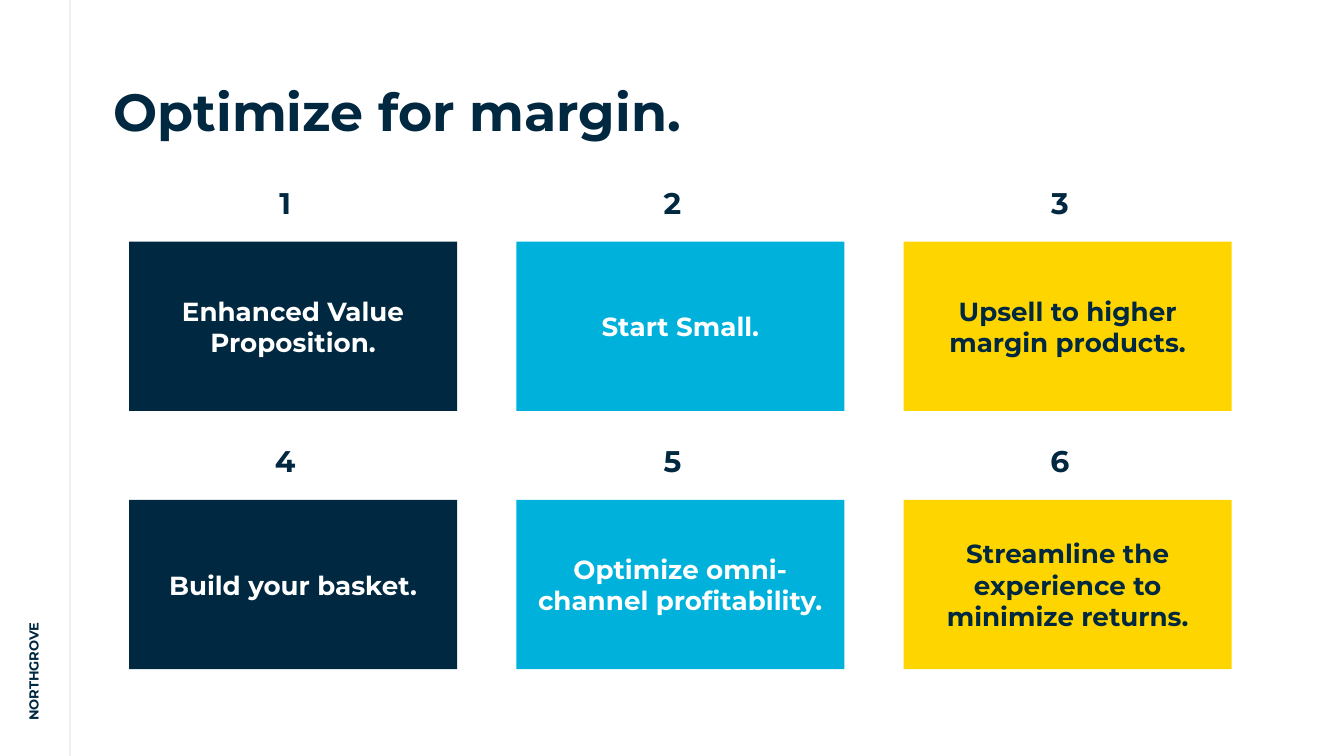
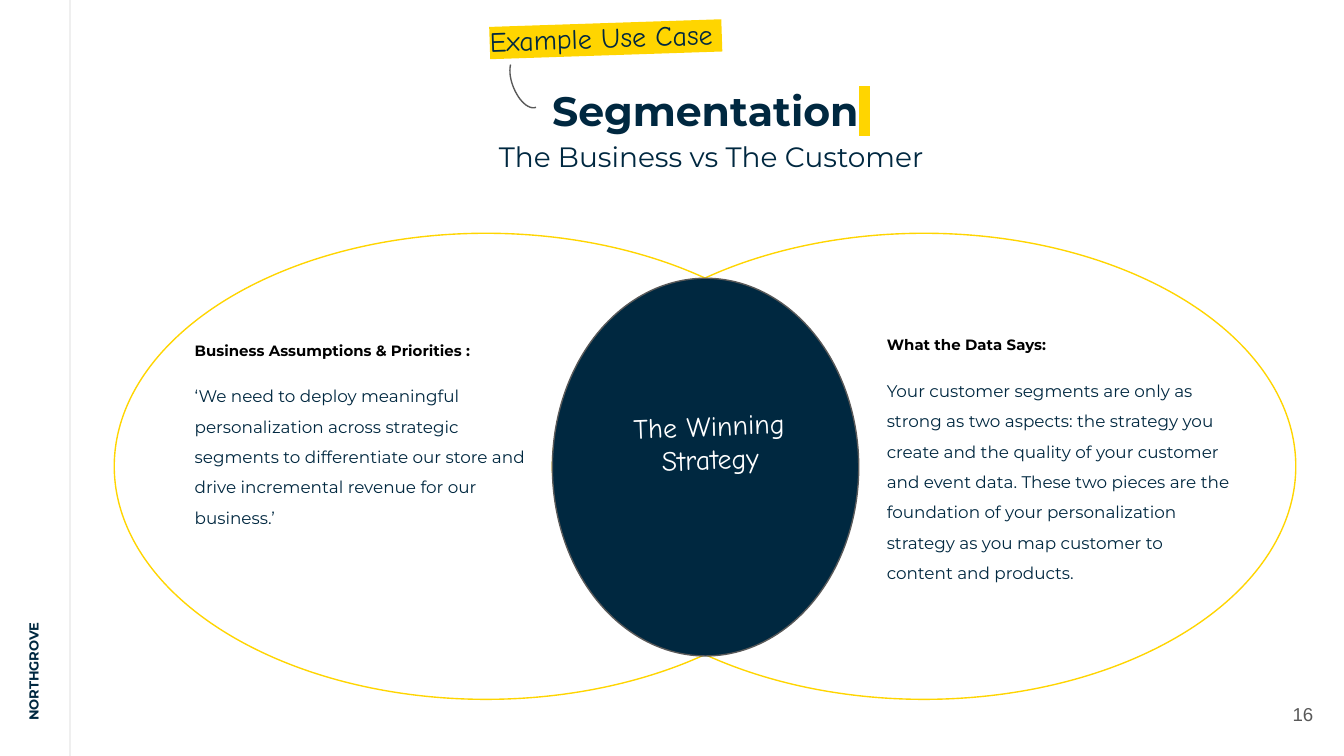
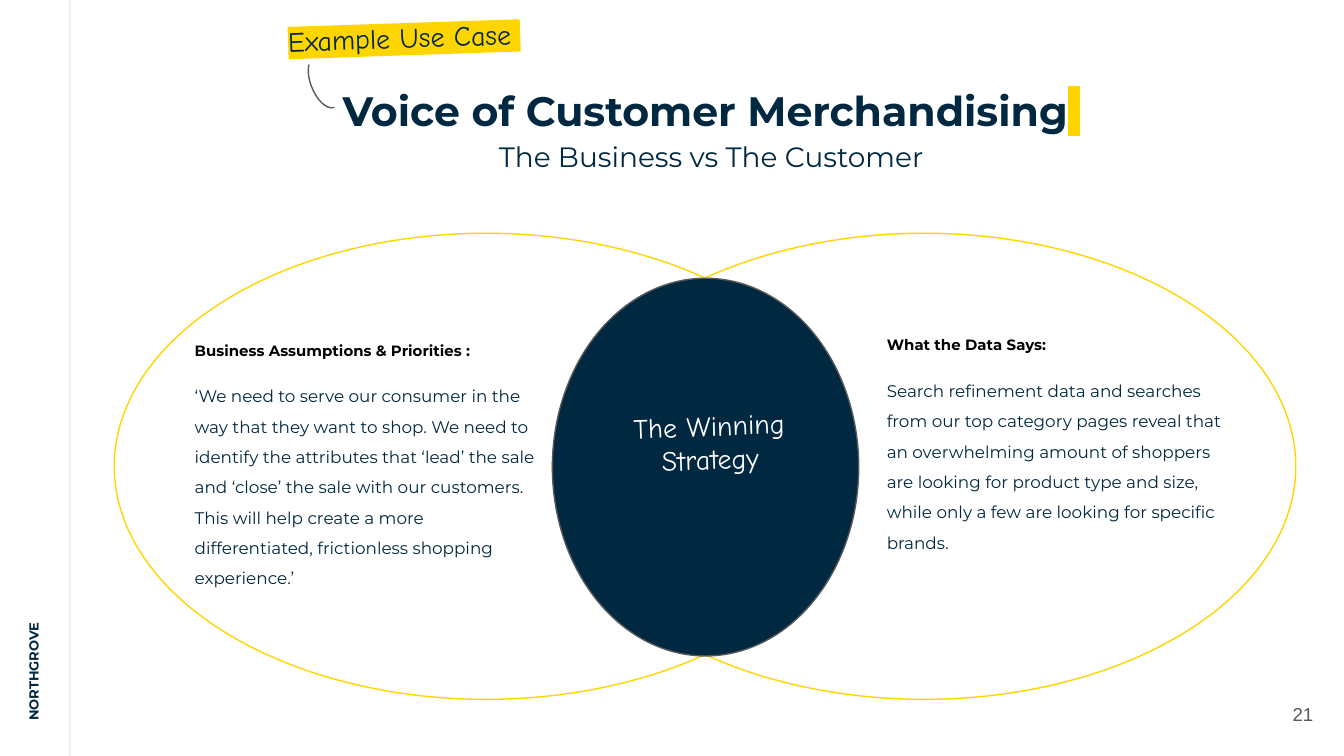
from lxml import etree
from pptx import Presentation
from pptx.dml.color import RGBColor
from pptx.enum import shapes, text
from pptx.oxml.ns import qn
from pptx.util import Cm, Pt

NAVY, BLUE, GOLD = "002840", "00B2DB", "FFD500"
WHITE, BLACK, GREY, PALE = "FFFFFF", "000000", "595959", "EFEFEF"
SANS, HAND, PLAIN = "Montserrat", "Comic Neue", "Arial"
LEFT, MID, RIGHT = text.PP_ALIGN.LEFT, text.PP_ALIGN.CENTER, text.PP_ALIGN.RIGHT
TOP, CENTER, BOTTOM = text.MSO_ANCHOR.TOP, text.MSO_ANCHOR.MIDDLE, text.MSO_ANCHOR.BOTTOM
RECT, OVAL = shapes.MSO_SHAPE.RECTANGLE, shapes.MSO_SHAPE.OVAL


def color(code):
    return RGBColor.from_string(code)


def mark(run, code=GOLD):
    """Highlight a run whose colour is already set."""
    fill = run._r.rPr.find(qn("a:solidFill"))
    light = etree.Element(qn("a:highlight"))
    etree.SubElement(light, qn("a:srgbClr"), val=code)
    fill.addnext(light)


def style(para, size, code=NAVY, font=SANS, bold=False, align=LEFT, gap=1.0):
    para.alignment = align
    para.line_spacing = gap
    for run in para.runs:
        run.font.name = font
        run.font.size = Pt(size)
        run.font.bold = bold
        run.font.color.rgb = color(code)


def setup(frame, anchor, pad=0.25):
    """Wrap the text at a fixed size, with equal margins unless pad differs."""
    frame.word_wrap = True
    frame.auto_size = text.MSO_AUTO_SIZE.NONE
    frame.vertical_anchor = anchor
    frame.margin_left = frame.margin_right = Cm(0.25)
    frame.margin_top = frame.margin_bottom = Cm(pad)


class Deck:
    def __init__(self):
        self.prs = Presentation()
        self.prs.slide_width, self.prs.slide_height = Cm(25.4), Cm(14.29)

    def slide(self):
        """Start a title-only slide with the side rule and the brand label."""
        self.page = self.prs.slides.add_slide(self.prs.slide_layouts[5])
        rule = self.page.shapes.add_connector(
            shapes.MSO_CONNECTOR.STRAIGHT, Cm(1.32), Cm(0), Cm(1.32), Cm(14.29))
        rule.line.color.rgb = color(PALE)
        rule.line.width = Pt(0.75)
        etree.SubElement(rule._element.spPr, qn("a:effectLst"))
        self.label((-3.89, 8.69, 9.04, 1.32), "NORTHGROVE", 7,
                   anchor=CENTER, turn=270, bold=True)

    def title(self, box, lines, anchor):
        shape = self.page.shapes.title
        shape.left, shape.top, shape.width, shape.height = map(Cm, box)
        setup(shape.text_frame, anchor)
        shape.text_frame.text = "\n".join(lines)
        return shape.text_frame.paragraphs

    def label(self, box, words, size, anchor=TOP, turn=0, **look):
        shape = self.page.shapes.add_textbox(*map(Cm, box))
        shape.rotation = turn
        frame = shape.text_frame
        setup(frame, anchor)
        frame.text = words
        style(frame.paragraphs[0], size, **look)
        return frame

    def shape(self, kind, box, fill=None, line=None):
        shape = self.page.shapes.add_shape(kind, *map(Cm, box))
        shape.shadow.inherit = False
        self.paint(shape, fill, line)
        return shape

    def paint(self, shape, fill, line):
        if fill:
            shape.fill.solid()
            shape.fill.fore_color.rgb = color(fill)
        else:
            shape.fill.background()
        if line:
            shape.line.color.rgb = color(line)
            shape.line.width = Pt(0.75)
        else:
            shape.line.fill.background()

    def card(self, box, words, fill, ink):
        frame = self.shape(RECT, box, fill).text_frame
        setup(frame, CENTER, 0.13)
        frame.text = words
        style(frame.paragraphs[0], 14, ink, bold=True, align=MID)

    def note(self, box, head, body):
        """Small bold heading over a paragraph with open line spacing."""
        frame = self.label(box, f"{head}\n{body}", 8)
        top, rest = frame.paragraphs
        style(top, 8, BLACK, bold=True, gap=1.15)
        top.space_after = Pt(9)
        style(rest, 9, gap=1.5)

    def curve(self, ends, steps=20):
        """Draw a cubic Bezier from its four points."""
        dots = []
        for i in range(steps + 1):
            t = i / steps
            parts = ((1 - t) ** 3, 3 * t * (1 - t) ** 2, 3 * t * t * (1 - t), t ** 3)
            dots.append([Cm(sum(w * p[k] for w, p in zip(parts, ends))) for k in (0, 1)])
        pen = self.page.shapes.build_freeform(*dots[0])
        pen.add_line_segments(dots[1:], close=False)
        shape = pen.convert_to_shape()
        shape.shadow.inherit = False
        self.paint(shape, None, GREY)


def margin(deck):
    deck.slide()
    head = deck.title((1.9, 1.24, 16, 1.6), ["Optimize for margin."], TOP)[0]
    style(head, 28, bold=True)
    tips = ["Enhanced Value Proposition.", "Start Small.",
            "Upsell to higher margin products.", "Build your basket.",
            "Optimize omni-channel profitability.",
            "Streamline the experience to minimize returns."]
    looks = [(NAVY, WHITE), (BLUE, WHITE), (GOLD, NAVY)]
    for i, tip in enumerate(tips):
        row, col = divmod(i, 3)
        x, y = 2.44 + 7.32 * col, 4.57 + 4.88 * row
        deck.card((x, y, 6.2, 3.2), tip, *looks[col])
        deck.label((x - 0.3, y - 1.75, 6.5, 1.6), str(i + 1), 16,
                   anchor=BOTTOM, bold=True, align=MID)


def venn(deck, topic, tag, number, belief, data):
    """Business and customer ovals; tag is the left edge of the handwritten label."""
    deck.slide()
    top, sub = deck.title((2.16, 1.27, 22.56, 2.2),
                          [topic, "The Business vs The Customer"], CENTER)
    cursor = top.add_run()
    cursor.text = " "
    style(top, 22, bold=True, align=MID, gap=1.15)
    style(sub, 15, align=MID, gap=1.15)
    mark(cursor)

    for x in (2.16, 10.44):
        deck.shape(OVAL, (x, 4.41, 14.05, 8.81), line=GOLD)
    deck.label((23.55, 12.95, 1.52, 1.1), number, 10, anchor=CENTER,
               code=GREY, font=PLAIN, align=RIGHT)
    case = deck.label((tag, 0.13, 7.82, 1.14), "Example Use Case ", 15,
                      turn=358, font=HAND, align=MID)
    mark(case.paragraphs[0].runs[0])
    deck.note((16.51, 6.05, 6.99, 5.51), "What the Data Says:", data)
    deck.note((3.43, 6.15, 6.99, 6.07), "Business Assumptions & Priorities :", belief)
    deck.shape(OVAL, (10.44, 5.26, 5.79, 7.14), NAVY, GREY)
    deck.label((11.66, 7.47, 3.53, 2.44), "The Winning Strategy", 15,
               turn=357.9, code=WHITE, font=HAND, align=MID)
    deck.curve([(tag + 2.59, 2.03), (tag + 2.34, 2.11),
                (tag + 2.03, 1.55), (tag + 2.11, 1.22)])


def main():
    deck = Deck()
    margin(deck)
    venn(deck, "Segmentation", 7.54, "16",
         "‘We need to deploy meaningful personalization across strategic segments "
         "to differentiate our store and drive incremental revenue for our business.’",
         "Your customer segments are only as strong as two aspects: the strategy you "
         "create and the quality of your customer and event data. These two pieces are "
         "the foundation of your personalization strategy as you map customer to "
         "content and products.")
    venn(deck, "Voice of Customer Merchandising", 3.73, "21",
         "‘We need to serve our consumer in the way that they want to shop. We need to "
         "identify the attributes that ‘lead’ the sale and ‘close’ the sale with our "
         "customers. This will help create a more differentiated, frictionless "
         "shopping experience.’",
         "Search refinement data and searches from our top category pages reveal that "
         "an overwhelming amount of shoppers are looking for product type and size, "
         "while only a few are looking for specific brands.")
    deck.prs.save("out.pptx")


if __name__ == "__main__":
    main()
